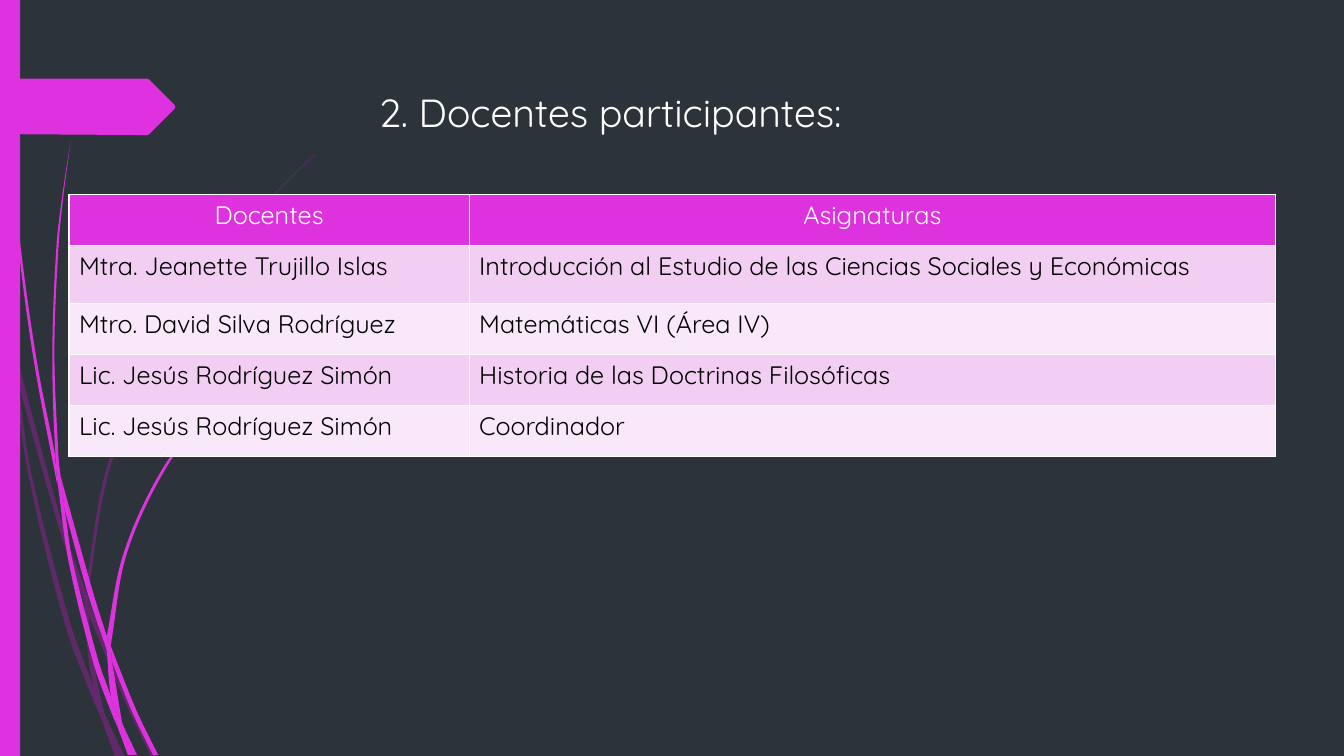
from math import dist

from lxml import etree
from pptx import Presentation
from pptx.dml.color import RGBColor
from pptx.enum.shapes import MSO_SHAPE
from pptx.enum.text import MSO_ANCHOR, PP_ALIGN
from pptx.oxml.ns import qn
from pptx.util import Pt

RECTANGLE = MSO_SHAPE.RECTANGLE
TOP, LEFT, CENTER = MSO_ANCHOR.TOP, PP_ALIGN.LEFT, PP_ALIGN.CENTER

COLORS = {
    "background": "2C333A", "accent": "DE32DE", "shade": "B01CB0",
    "band_dark": "F2CEF2", "band_light": "F9E8F9",
    "white": "FFFFFF", "black": "000000",
}
FONT = "Quicksand"

# Each blade of grass has one edge out and one edge back, in points
SHADE_BLADES = [
    ([(7.9, 252), (6.5, 231.8), (0, 203)], [(0, 215.3), (7.2, 247.7), (7.9, 252)]),
    ([(10.1, 248.4), (44.6, 374.4), (61.2, 421.9)],
     [(60.5, 431.3), (41.8, 375.8), (12.2, 270.7)]),
    ([(63.4, 429.1), (66.2, 437), (91.4, 498.2), (111.6, 540.7)],
     [(108, 540.7), (88.6, 499.7), (63.4, 439.2)]),
    ([(75.6, 511.9), (89.3, 540.7)], [(85.7, 540.7), (75.6, 511.9)]),
    ([(7.9, 252), (12.2, 270.7), (22.3, 337.7), (50.4, 445.7), (67, 491.8),
      (71.3, 509), (72.7, 514.1)],
     [(72.7, 514.1), (66.2, 499), (46.8, 447.1), (20.2, 338.4), (7.9, 252)]),
    ([(60.5, 431.3), (62.6, 465.1), (67, 491.8), (69.1, 498.2), (75.6, 511.9)],
     [(75.6, 511.9), (74.2, 508.3), (65.5, 465.1), (63.4, 439.2), (60.5, 431.3)]),
    ([(224.6, 110.2), (208.1, 126), (193, 141.8), (164.2, 175.7), (113.8, 250.6),
      (77, 331.9), (61.2, 420.5)],
     [(63.4, 429.1), (63.4, 420.5), (79.2, 332.6), (115.2, 251.3), (164.9, 176.4),
      (193, 142.6), (208.8, 126), (224.6, 110.9)]),
    ([(72.7, 514.1), (82.1, 540.7)], [(85.7, 540.7), (72.7, 514.1)]),
    ([(61.2, 421.9), (60.5, 431.3)], [(63.4, 439.2), (63.4, 429.1)]),
    ([(67, 491.8), (71.3, 509), (72.7, 514.1), (85.7, 540.7)],
     [(85.7, 540.7), (75.6, 511.9), (69.1, 498.2), (67, 491.8)]),
]
ACCENT_BLADES = [
    ([(2.2, 0), (2.9, 34.6), (5, 79.2), (12.2, 167.8), (23.8, 255.6),
      (40.3, 343.4), (41, 346.3)],
     [(39.6, 329), (39.6, 326.2), (25.9, 255.6), (13.7, 167), (5.8, 78.5),
      (3.6, 34.6), (2.9, 0)]),
    ([(43.2, 339.8), (67, 424.8), (76.3, 454.3)],
     [(76.3, 464.4), (63.4, 426.2), (46.1, 363.6)]),
    ([(79.2, 461.5), (81.4, 467.3), (97.9, 508.3), (113, 539.3)],
     [(109.4, 539.3), (95, 509.8), (79.9, 472.3)]),
    ([(41, 343.4), (46.1, 363.6), (51.8, 400.3), (70.6, 473), (79.2, 497.5),
      (83.5, 516.2), (84.2, 519.8)],
     [(84.2, 519.8), (79.9, 509.8), (67, 474.5), (49, 401), (41, 343.4)]),
    ([(50.4, 101.5), (44.6, 139), (40.3, 176.4), (37.4, 251.3), (39.6, 323.3),
      (43.2, 339.8)],
     [(43.2, 339.8), (41.8, 326.2), (38.9, 251.3), (41.8, 176.4), (45.4, 139),
      (50.4, 101.5)]),
    ([(87.8, 517.7), (97.9, 539.3)], [(95.8, 539.3), (87.8, 517.7)]),
    ([(39.6, 323.3), (39.6, 326.2), (41, 343.4), (46.1, 363.6)],
     [(46.1, 363.6), (43.2, 339.8), (39.6, 323.3)]),
    ([(187.2, 247.7), (176.4, 257.8), (166.3, 268.6), (146.9, 291.6),
      (112.3, 341.3), (87.8, 396.7), (76.3, 454.3)],
     [(79.2, 461.5), (79.9, 455.8), (90, 397.4), (113.8, 342.7), (147.6, 292.3),
      (166.3, 269.3), (176.4, 258.5), (187.9, 247.7)]),
    ([(84.2, 519.8), (91.4, 539.3)], [(94.3, 539.3), (84.2, 519.8)]),
    ([(76.3, 464.4), (79.2, 497.5), (83.5, 508.3), (87.8, 517.7)],
     [(87.8, 517.7), (87.1, 515.5), (79.9, 472.3), (78.5, 468.7), (76.3, 464.4)]),
    ([(76.3, 454.3), (76.3, 464.4)], [(79.9, 472.3), (79.2, 461.5)]),
    ([(79.2, 497.5), (83.5, 516.2), (84.2, 519.8), (93.6, 539.3)],
     [(95.8, 539.3), (87.8, 517.7), (83.5, 508.3), (79.2, 497.5)]),
]
TAG_OUTLINE = [(0, 0), (105.1, 0), (106.6, 0.7), (124.6, 18.7), (125.3, 20.1),
               (124.6, 21.6), (106.6, 39.6), (105.1, 40.3), (0, 39.6)]

TABLE_ROWS = [
    ("Docentes", "Asignaturas"),
    ("Mtra. Jeanette Trujillo Islas",
     "Introducción al Estudio de las Ciencias Sociales y Económicas"),
    ("Mtro. David Silva Rodríguez", "Matemáticas VI (Área IV)"),
    ("Lic. Jesús Rodríguez Simón", "Historia de las Doctrinas Filosóficas"),
    ("Lic. Jesús Rodríguez Simón", "Coordinador"),
]
COLUMN_WIDTHS = [285.8, 576]
ROW_HEIGHTS = [36.4, 41.5, 36.4, 36.4, 36.4]


def rgb(name):
    return RGBColor.from_string(COLORS[name])


def paint(shape, color, opacity=None):
    shape.shadow.inherit = False
    shape.fill.solid()
    shape.fill.fore_color.rgb = rgb(color)
    shape.line.fill.background()
    if opacity:
        tint = shape.element.find(".//" + qn("a:srgbClr"))
        etree.SubElement(tint, qn("a:alpha"), val=str(opacity * 1000))


def write(frame, text, size, color, align=LEFT):
    para = frame.paragraphs[0]
    para.alignment = align
    span = para.add_run()
    span.text = text
    for name, value in {"size": Pt(size), "name": FONT, "bold": False}.items():
        setattr(span.font, name, value)
    span.font.color.rgb = rgb(color)


def edge_curves(anchors):
    """Return (control, control, end) for each step of a smooth edge."""
    pairs = list(zip(anchors, anchors[1:]))
    gaps = [dist(start, end) for start, end in pairs]
    chords = [((x2 - x1) / gap, (y2 - y1) / gap)
              for ((x1, y1), (x2, y2)), gap in zip(pairs, gaps)]
    inner = [tuple((a * g1 + b * g2) / (g1 + g2) for a, b in zip(first, second))
             for first, second, g1, g2 in zip(chords, chords[1:], gaps, gaps[1:])]
    slopes = [chords[0], *inner, chords[-1]]
    return [(tuple(p + s * gap / 3 for p, s in zip(start, slopes[i])),
             tuple(p - s * gap / 3 for p, s in zip(end, slopes[i + 1])), end)
            for i, ((start, end), gap) in enumerate(zip(pairs, gaps))]


def add_outline(page, box, points):
    left, top = box
    corners = [(Pt(left + x), Pt(top + y)) for x, y in points]
    builder = page.shapes.build_freeform(*corners[0])
    builder.add_line_segments(corners[1:], close=True)
    return builder.convert_to_shape()


def add_blade(page, box, out, back):
    shape = add_outline(page, box, out + back)
    # The step that joins both edges stays straight
    steps = [*edge_curves(out), None, *edge_curves(back)]
    lines = list(shape.element.iter(qn("a:lnTo")))
    for line, step in zip(lines, steps):
        if step:
            curve = etree.Element(qn("a:cubicBezTo"))
            for x, y in step:
                etree.SubElement(curve, qn("a:pt"),
                                 x=str(Pt(box[0] + x) - shape.left),
                                 y=str(Pt(box[1] + y) - shape.top))
            line.getparent().replace(line, curve)
    return shape


def add_side_band(page, box):
    left, top, width, height = box
    for blades, color, opacity in ((SHADE_BLADES, "shade", 40),
                                   (ACCENT_BLADES, "accent", None)):
        for out, back in blades:
            paint(add_blade(page, (left, top), out, back), color, opacity)
    bar = page.shapes.add_shape(RECTANGLE, *map(Pt, (left, top, width, height)))
    paint(bar, "accent")
    paint(add_outline(page, (left, top + 56.2), TAG_OUTLINE), "accent")


def add_title(page, box):
    frame = page.shapes.add_textbox(*map(Pt, box)).text_frame
    frame.word_wrap = True
    frame.vertical_anchor = TOP
    write(frame, "2. Docentes participantes:", 28, "white")


def add_borders(cell, color, width):
    properties = cell._tc.get_or_add_tcPr()
    for index, side in enumerate(("lnL", "lnR", "lnT", "lnB")):
        line = etree.Element(qn("a:" + side), w=str(Pt(width)))
        fill = etree.SubElement(line, qn("a:solidFill"))
        etree.SubElement(fill, qn("a:srgbClr"), val=COLORS[color])
        properties.insert(index, line)


def add_teacher_table(page, box):
    table = page.shapes.add_table(
        len(TABLE_ROWS), len(COLUMN_WIDTHS), *map(Pt, box)).table
    for column, width in zip(table.columns, COLUMN_WIDTHS):
        column.width = Pt(width)
    for number, (row, height) in enumerate(zip(table.rows, ROW_HEIGHTS)):
        row.height = Pt(height)
        band, ink, align = (("band_light", "band_dark")[number % 2], "black", LEFT)
        if number == 0:
            band, ink, align = "accent", "white", CENTER
        for cell, text in zip(row.cells, TABLE_ROWS[number]):
            cell.fill.solid()
            cell.fill.fore_color.rgb = rgb(band)
            add_borders(cell, "white", 1)
            write(cell.text_frame, text, 18, ink, align)


deck = Presentation()
deck.slide_width, deck.slide_height = Pt(960), Pt(540)
page = deck.slides.add_slide(deck.slide_layouts[6])
page.background.fill.solid()
page.background.fill.fore_color.rgb = rgb("background")
add_side_band(page, (0, 0, 14.4, 540))
add_title(page, (263.5, 59.5, 452, 60.5))
add_teacher_table(page, (49.3, 139, sum(COLUMN_WIDTHS), sum(ROW_HEIGHTS)))
deck.save("out.pptx")
